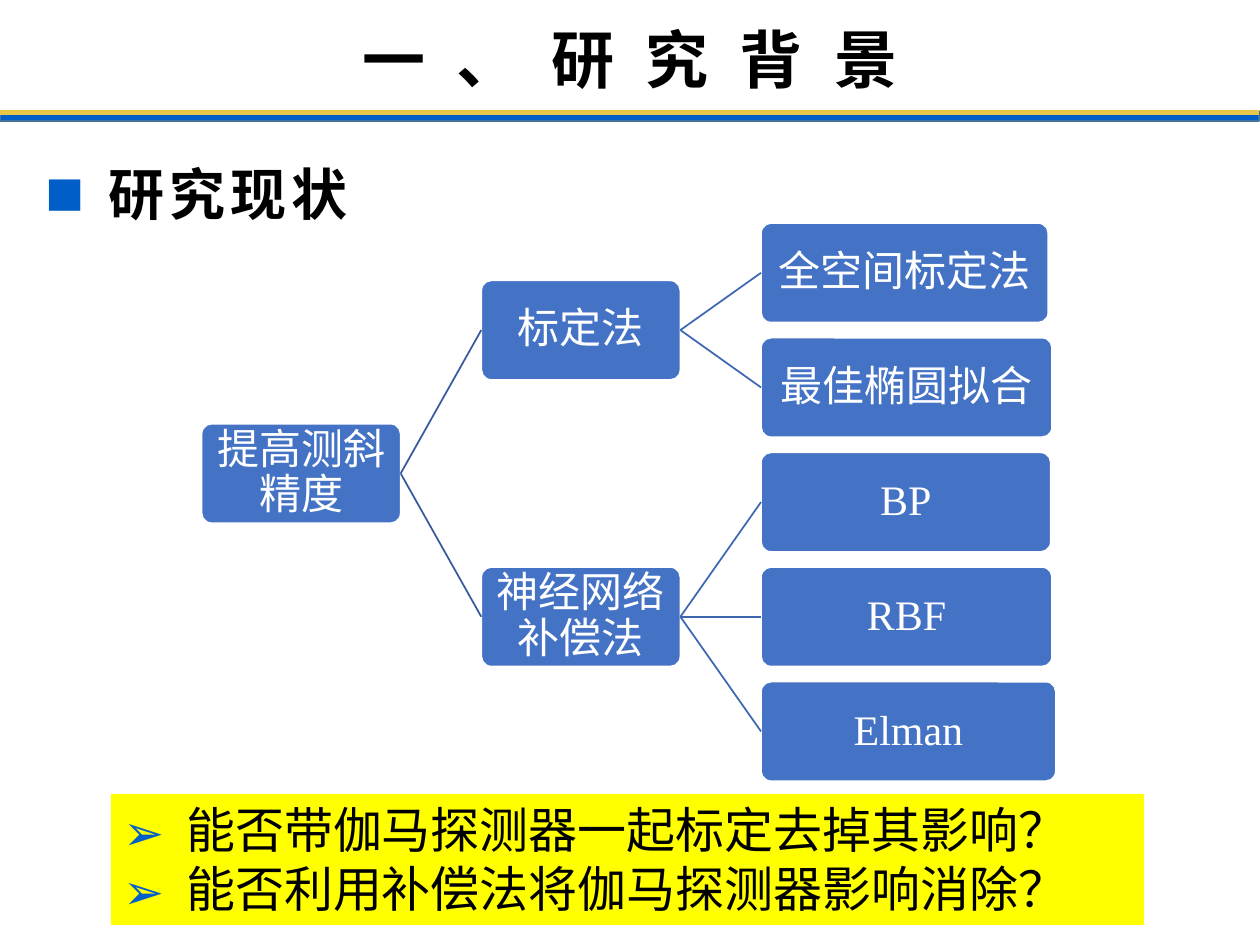
from lxml import etree
from pptx import Presentation
from pptx import util as u
from pptx.dml import color
from pptx.enum import shapes, text
from pptx.oxml import ns

I = u.Inches
HUES = {"blue": "005EC8", "sky": "00B0F0", "edge": "43739E", "gold": "E8C648",
        "node": "4472C4", "stem": "365B9D", "twig": "3E67B2",
        "white": "FFFFFF", "black": "000000", "mark": "FFFF00"}
SANS, SERIF = "Noto Sans CJK SC", "Times New Roman"
MID = text.PP_ALIGN.CENTER
STYLES = {
    "title": {"font": {"size": u.Pt(36), "bold": True, "name": SERIF}, "hue": "black",
              "para": {"alignment": MID, "line_spacing": 0.9}, "gap": 18},
    "head": {"font": {"size": u.Pt(32), "bold": True, "name": SANS}, "hue": "black",
             "para": {"line_spacing": 1.3, "space_before": u.Pt(6)}, "gap": 3},
    "ask": {"font": {"size": u.Pt(28), "name": SANS}, "hue": "black",
            "para": {"alignment": text.PP_ALIGN.LEFT}, "gap": 0},
    "node": {"font": {"size": u.Pt(24), "name": SERIF}, "hue": "white",
             "para": {"alignment": MID, "line_spacing": 0.9}, "gap": 0},
}
TREE = ("提高测斜精度", 1.75, [
    ("标定法", 0.5, [("全空间标定法", 0, 2.28), ("最佳椭圆拟合", 1, 2.31)]),
    ("神经网络补偿法", 3, [("BP", 2, 2.3), ("RBF", 3, 2.31), ("Elman", 4, 2.34)]),
])


def rgb(hue):
    return color.RGBColor.from_string(HUES[hue])


def assign(item, values):
    for key, value in values.items():
        setattr(item, key, value)


def sub(node, tag, **attrs):
    return etree.SubElement(node, ns.qn(tag), attrs)


def write(frame, lines, style, **opts):
    look = STYLES[style]
    assign(frame, {"word_wrap": True, **opts})
    for n, line in enumerate(lines):
        para = frame.add_paragraph() if n else frame.paragraphs[0]
        assign(para, look["para"])
        run = para.add_run()
        run.text = line
        assign(run.font, look["font"])
        run.font.color.rgb = rgb(look["hue"])
        props = run._r.get_or_add_rPr()
        props.set("spc", str(look["gap"] * 100))
        sub(props, "a:ea", typeface=SANS)


def bullet(para, char, size=100):
    props = para._p.get_or_add_pPr()
    props.set("marL", str(I(0.5)))
    props.set("indent", str(I(-0.5)))
    sub(sub(props, "a:buClr"), "a:srgbClr", val=HUES["blue"])
    sub(props, "a:buSzPct", val=str(size * 1000))
    sub(props, "a:buFont", typeface=SANS)
    sub(props, "a:buChar", char=char)


def block(slide, kind, box, fill, line=None):
    shape = slide.shapes.add_shape(kind, *map(I, box))
    shape.shadow.inherit = False
    shape.fill.solid()
    shape.fill.fore_color.rgb = rgb(fill)
    if line:
        shape.line.color.rgb = rgb(line)
        shape.line.width = u.Pt(1)
    else:
        shape.line.fill.background()
    return shape


def label(slide, box):
    return slide.shapes.add_textbox(*map(I, box)).text_frame


def banner(slide, x, y, w):
    flow = shapes.MSO_SHAPE.FLOWCHART_PROCESS
    bar = block(slide, flow, (x, y + 0.87, w, 0.08), "blue", "edge")
    bar.fill.gradient()
    bar.fill.gradient_angle = 90
    for stop, hue, pos in zip(bar.fill.gradient_stops, ("blue", "sky"), (0.63, 1)):
        stop.color.rgb = rgb(hue)
        stop.position = pos
    block(slide, flow, (x, y + 0.86, w, 0.04), "gold")
    write(label(slide, (x + 1.87, y, 6.26, 0.98)), ["一、研究背景"], "title",
          vertical_anchor=text.MSO_ANCHOR.MIDDLE)


def heading(slide, box):
    frame = label(slide, box)
    write(frame, ["研究现状"], "head")
    bullet(frame.paragraphs[0], "■", 70)


def node(slide, x, y, name, w=1.58):
    shape = block(slide, shapes.MSO_SHAPE.ROUNDED_RECTANGLE, (x, y, w, 0.79), "node", "white")
    shape.adjustments[0] = 0.1
    pads = {"margin_" + side: I(0.04) for side in ("left", "right", "top", "bottom")}
    write(shape.text_frame, [name], "node", vertical_anchor=text.MSO_ANCHOR.MIDDLE, **pads)
    return shape


def link(slide, start, end, hue):
    line = slide.shapes.add_connector(shapes.MSO_CONNECTOR.STRAIGHT, 0, 0, 0, 0)
    line.begin_connect(start, 3)
    line.end_connect(end, 1)
    line.line.color.rgb = rgb(hue)
    line.line.width = u.Pt(1)
    sub(line._element.spPr, "a:effectLst")


def tree(slide, x, y, step=2.215, pitch=0.91):
    name, row, limbs = TREE
    root = node(slide, x, y + row * pitch, name)
    for name, row, leaves in limbs:
        limb = node(slide, x + step, y + row * pitch, name)
        link(slide, root, limb, "stem")
        for leaf, row, w in leaves:
            tip = node(slide, x + 2 * step, y + row * pitch, leaf, w)
            link(slide, limb, tip, "twig")


def asks(slide, box):
    frame = block(slide, shapes.MSO_SHAPE.RECTANGLE, box, "mark").text_frame
    write(frame, ["能否带伽马探测器一起标定去掉其影响？", "能否利用补偿法将伽马探测器影响消除？"],
          "ask", vertical_anchor=text.MSO_ANCHOR.TOP)
    for para in frame.paragraphs:
        bullet(para, "➢")


def main():
    deck = Presentation()
    deck.slide_width, deck.slide_height = I(10), I(7.5)
    slide = deck.slides.add_slide(deck.slide_layouts[6])
    banner(slide, 0, 0.01, 9.99)
    heading(slide, (0.26, 1.06, 9.48, 0.7))
    tree(slide, 1.6, 1.77, 2.22)
    asks(slide, (0.88, 6.3, 8.2, 1.04))
    deck.save("out.pptx")


if __name__ == "__main__":
    main()
